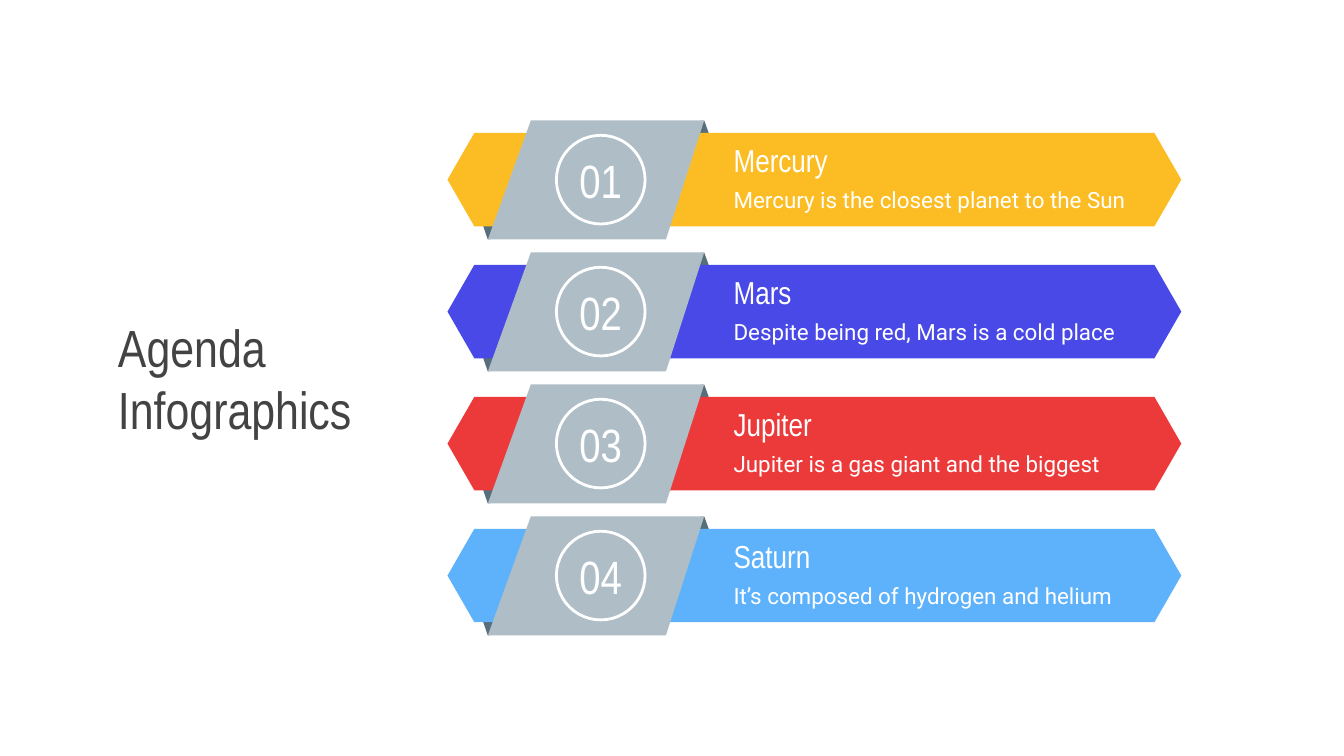
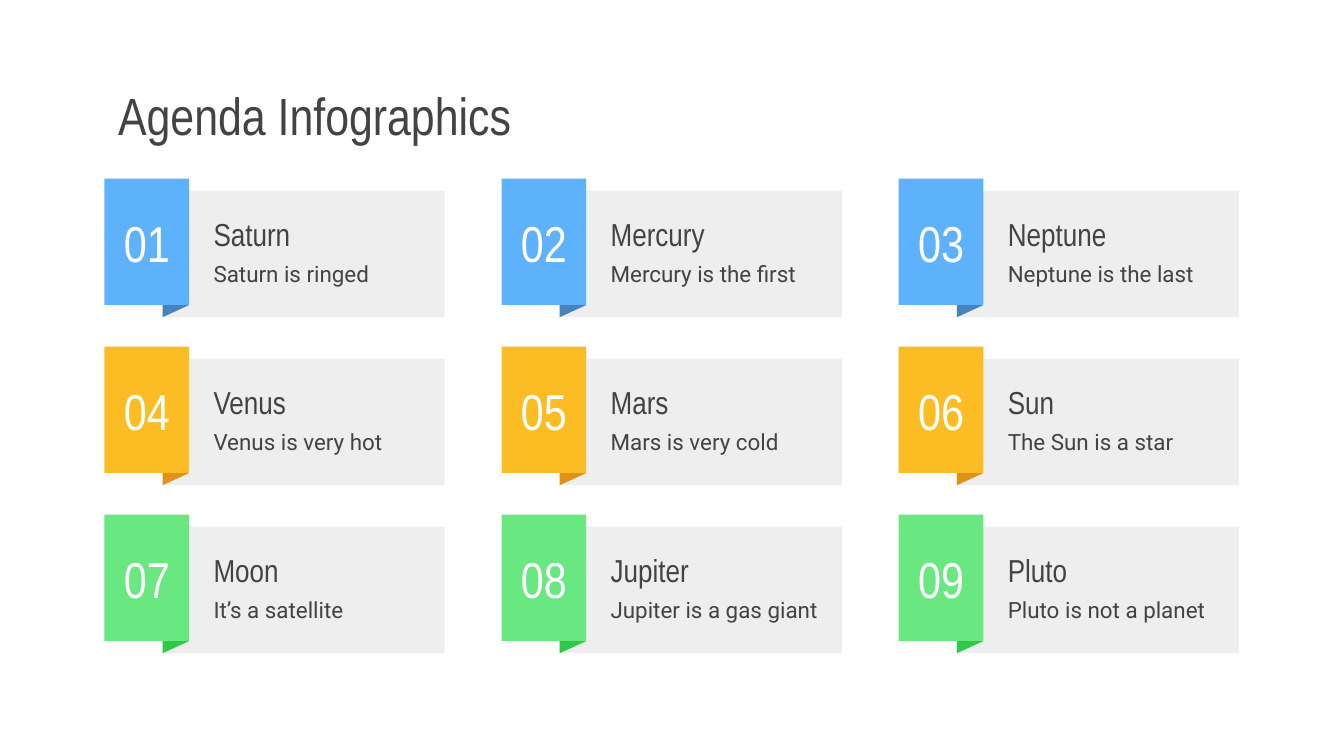
import pptx
import pptx.dml.color
import pptx.enum.shapes
import pptx.enum.text
import pptx.util

COLS, ROWS = 100, 56.25  # square grid cells, a tenth of an inch each
CELL = pptx.util.Inches(0.1)
HEAD, BODY = "Arial Narrow", "Roboto"
HUES = {
    "ink": "434343", "white": "FFFFFF", "panel": "EEEEEE",
    "slate": "AFBDC6", "fold": "576F7A",
    "gold": "FCBD24", "amber": "E09214",
    "blue": "4949E7", "red": "EC3A3B",
    "sky": "5EB2FC", "steel": "4685BC",
    "green": "69E781", "leaf": "2FC948",
}


def cells(*spans):
    return [round(span * CELL) for span in spans]


def hue(name):
    return pptx.dml.color.RGBColor.from_string(HUES[name])


def write(shape, text, size, font=HEAD, color="ink", center=False, side=1):
    """Put one formatted paragraph in a shape; side is its left and right inset."""
    frame = shape.text_frame
    frame.word_wrap = True
    frame.vertical_anchor = pptx.enum.text.MSO_ANCHOR.MIDDLE
    frame.margin_left, frame.margin_right = cells(side, side)
    frame.margin_top, frame.margin_bottom = cells(1, 1)
    line = frame.paragraphs[0]
    align = pptx.enum.text.PP_ALIGN
    line.alignment = align.CENTER if center else align.LEFT
    run = line.add_run()
    run.text = text
    run.font.name, run.font.size = font, pptx.util.Pt(size)
    run.font.color.rgb = hue(color)


class Deck:
    def __init__(self):
        self.file = pptx.Presentation()
        self.file.slide_width, self.file.slide_height = cells(COLS, ROWS)

    def slide(self, title, *box):
        self.page = self.file.slides.add_slide(self.file.slide_layouts[6])
        self.layer = self.page.shapes
        self.text(box, title, size=28)

    def group(self):
        self.layer = self.page.shapes.add_group_shape().shapes

    def paint(self, shape, fill=None, line=None):
        shape.shadow.inherit = False
        if fill:
            shape.fill.solid()
            shape.fill.fore_color.rgb = hue(fill)
        else:
            shape.fill.background()
        if line:
            shape.line.color.rgb = hue(line)
            shape.line.width = pptx.util.Pt(1.5)
        else:
            shape.line.fill.background()
        return shape

    def text(self, box, text, **style):
        write(self.layer.add_textbox(*cells(*box)), text, **style)

    def pair(self, x, y, width, name, note, color):
        """A name with a note below it."""
        self.text((x, y, width, 4), name, size=17, color=color)
        self.text((x, y + 2.95, width, 4), note, size=12, font=BODY, color=color)

    def rect(self, box, fill):
        kind = pptx.enum.shapes.MSO_SHAPE.RECTANGLE
        return self.paint(self.layer.add_shape(kind, *cells(*box)), fill)

    def ring(self, box, line):
        kind = pptx.enum.shapes.MSO_SHAPE.OVAL
        return self.paint(self.layer.add_shape(kind, *cells(*box)), line=line)

    def poly(self, fill, y, points):
        """A closed outline whose points are measured down from y."""
        spots = [cells(across, y + down) for across, down in points]
        pen = self.layer.build_freeform(*spots[0])
        pen.add_line_segments(spots[1:], close=True)
        return self.paint(pen.convert_to_shape(), fill)


def ribbons(deck):
    rows = [
        ("gold", "Mercury", "Mercury is the closest planet to the Sun"),
        ("blue", "Mars", "Despite being red, Mars is a cold place"),
        ("red", "Jupiter", "Jupiter is a gas giant and the biggest"),
        ("sky", "Saturn", "It’s composed of hydrogen and helium"),
    ]
    deck.slide("Agenda Infographics", 7.8, 23.5, 21.7, 9.2)
    for index, (color, name, note) in enumerate(rows):
        y = 8.97 + 9.82 * index
        deck.group()
        # Folds behind the ribbon
        deck.poly("fold", y, [(52.4, 0), (48.1, 0.55), (48.1, 2.9), (53.45, 2.9)])
        deck.poly("fold", y, [(35.3, 5.9), (36.3, 8.85), (40.6, 8.15), (40.6, 5.9)])
        # Ribbon and slanted plate
        deck.poly(color, y, [(35.3, 0.92), (33.3, 4.4), (35.3, 7.87),
                             (85.9, 7.87), (87.9, 4.4), (85.9, 0.92)])
        deck.poly("slate", y, [(39.5, 0), (36.3, 8.85), (49.55, 8.85), (52.4, 0)])
        # Words and number
        deck.pair(53.6, y + 0.92, 31.8, name, note, "white")
        ring = deck.ring((41.4, y + 1.1, 6.6, 6.6), "white")
        write(ring, f"{index + 1:02}", size=25, color="white", center=True, side=0)


def cards(deck):
    tones = [("sky", "steel"), ("gold", "amber"), ("green", "leaf")]
    items = [
        ("Saturn", "Saturn is ringed"),
        ("Mercury", "Mercury is the first"),
        ("Neptune", "Neptune is the last"),
        ("Venus", "Venus is very hot"),
        ("Mars", "Mars is very cold"),
        ("Sun", "The Sun is a star"),
        ("Moon", "It’s a satellite"),
        ("Jupiter", "Jupiter is a gas giant"),
        ("Pluto", "Pluto is not a planet"),
    ]
    deck.slide("Agenda Infographics", 7.8, 5.9, 84.5, 5.3)
    for index, (name, note) in enumerate(items):
        row, col = divmod(index, 3)
        x, y = 7.77 + 29.55 * col, 13.3 + 12.5 * row
        color, shade = tones[row]
        deck.group()
        # Panel, numbered tab and its fold
        deck.rect((x + 4.33, y + 0.9, 21, 9.4), "panel")
        tab = deck.rect((x, y, 6.3, 9.4), color)
        write(tab, f"{index + 1:02}", size=27, color="white", center=True)
        deck.poly(shade, y, [(x + 4.33, 9.4), (x + 4.33, 10.3), (x + 6.3, 9.4)])
        # Words
        deck.pair(x + 7.13, y + 2.13, 18.2, name, note, "ink")


def main():
    deck = Deck()
    ribbons(deck)
    cards(deck)
    deck.file.save("out.pptx")


if __name__ == "__main__":
    main()
